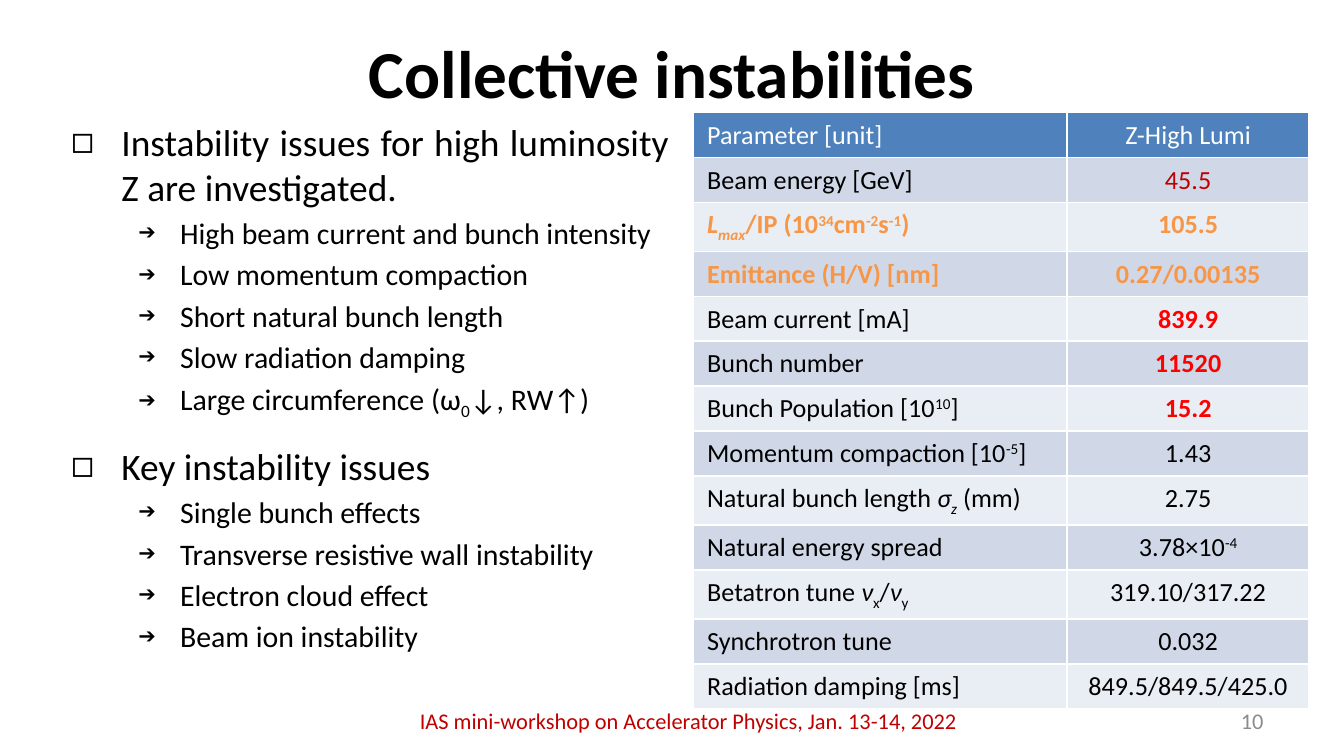
"""Build the slide on collective instabilities with its parameter table."""
from dataclasses import dataclass
from lxml.etree import SubElement
from pptx import Presentation
from pptx.dml.color import RGBColor
from pptx.enum.text import MSO_ANCHOR, MSO_AUTO_SIZE, PP_ALIGN
from pptx.oxml.ns import qn
from pptx.util import Cm, Pt


@dataclass(frozen=True)
class Theme:
    font: str = "Calibri"
    title: int = 36
    issue: int = 20
    detail: int = 16
    cell: int = 14
    footer: int = 12
    black: str = "000000"
    white: str = "FFFFFF"
    dark_red: str = "C00000"
    red: str = "FF0000"
    orange: str = "F79646"
    grey: str = "8C8C8C"
    header: str = "4F81BD"
    bands: tuple = ("D0D8E8", "E9EDF4")


T = Theme()
TITLE = "Collective instabilities"
ISSUES = [
    ("Instability issues for high luminosity Z are investigated.", [
        "High beam current and bunch intensity",
        "Low momentum compaction",
        "Short natural bunch length",
        "Slow radiation damping",
        [("Large circumference (ω", ""), ("0", "_"), ("↓, RW↑)", "")],
    ]),
    ("Key instability issues", [
        "Single bunch effects",
        "Transverse resistive wall instability",
        "Electron cloud effect",
        "Beam ion instability",
    ]),
]
HEADINGS = ("Parameter [unit]", "Z-High Lumi")
LUMINOSITY = [("L", "i"), ("max", "i_"), ("/IP (10", ""), ("34", "^"), ("cm", ""),
              ("-2", "^"), ("s", ""), ("-1", "^"), (")", "")]
BUNCH_LENGTH = [("Natural bunch length ", ""), ("σ", "i"), ("z", "i_"), (" (mm)", "")]
TUNE = [("Betatron tune ", ""), ("ν", "i"), ("x", "_"), ("/", ""), ("ν", "i"), ("y", "_")]
PLAIN = (T.black, False)
KEY = (T.orange, True)
ALERT = (T.red, True)
PARAMETERS = [
    ("Beam energy [GeV]", PLAIN, "45.5", (T.dark_red, False)),
    (LUMINOSITY, KEY, "105.5", KEY),
    ("Emittance (H/V) [nm]", KEY, "0.27/0.00135", KEY),
    ("Beam current [mA]", PLAIN, "839.9", ALERT),
    ("Bunch number", PLAIN, "11520", ALERT),
    ([("Bunch Population [10", ""), ("10", "^"), ("]", "")], PLAIN, "15.2", ALERT),
    ([("Momentum compaction [10", ""), ("-5", "^"), ("]", "")], PLAIN, "1.43", PLAIN),
    (BUNCH_LENGTH, PLAIN, "2.75", PLAIN),
    ("Natural energy spread", PLAIN, [("3.78×10", ""), ("-4", "^")], PLAIN),
    (TUNE, PLAIN, "319.10/317.22", PLAIN),
    ("Synchrotron tune", PLAIN, "0.032", PLAIN),
    ("Radiation damping [ms]", PLAIN, "849.5/849.5/425.0", PLAIN),
]
FOOTERS = [
    ("IAS mini-workshop on Accelerator Physics, Jan. 13-14, 2022",
     7.11, 11.81, PP_ALIGN.CENTER, T.dark_red),
    ("10", 18.21, 5.92, PP_ALIGN.RIGHT, T.grey),
]
BASELINES = {"^": "30000", "_": "-25000"}


def write(p, text, size, color=T.black, bold=False, align=PP_ALIGN.LEFT):
    p.alignment = align
    for part, marks in [(text, "")] if isinstance(text, str) else text:
        r = p.add_run()
        r.text = part
        f = r.font
        f.name, f.size, f.bold = T.font, Pt(size), bold
        f.italic = "i" in marks
        f.color.rgb = RGBColor.from_string(color)
        for mark, shift in BASELINES.items():
            if mark in marks:
                f._element.set("baseline", shift)


def place(sp, left, top, width, height):
    sp.left, sp.top, sp.width, sp.height = Cm(left), Cm(top), Cm(width), Cm(height)


def add_bullet(tf, text, level, before):
    p = tf.paragraphs[0] if not tf.paragraphs[0].runs else tf.add_paragraph()
    p.level = level
    p.space_before = Pt(before)
    write(p, text, (T.issue, T.detail)[level], align=PP_ALIGN.JUSTIFY)
    margin, hang = ((0.95, 0.95), (2.06, 0.79))[level]
    pPr = p._p.get_or_add_pPr()
    pPr.set("marL", str(Cm(margin)))
    pPr.set("indent", str(-Cm(hang)))
    SubElement(pPr, qn("a:buSzPct"), val=("100000", "70000")[level])
    SubElement(pPr, qn("a:buChar"), char="◻➔"[level])


def add_parameters(s):
    rows = [(HEADINGS[0], (T.white, False), HEADINGS[1], (T.white, False))] + PARAMETERS
    row_height = 0.71
    table = s.shapes.add_table(len(rows), 2, Cm(13.11), Cm(2.13), Cm(11.63),
                               Cm(row_height * len(rows))).table
    for column, width in zip(table.columns, (7.06, 4.57)):
        column.width = Cm(width)
    for i, (name, name_style, value, value_style) in enumerate(rows):
        fill = T.bands[(i - 1) % 2] if i else T.header
        cells = ((name, name_style, PP_ALIGN.LEFT), (value, value_style, PP_ALIGN.CENTER))
        for j, (text, style, align) in enumerate(cells):
            cell = table.cell(i, j)
            cell.fill.solid()
            cell.fill.fore_color.rgb = RGBColor.from_string(fill)
            write(cell.text_frame.paragraphs[0], text, T.cell, *style, align)


def main():
    prs = Presentation()
    prs.slide_width, prs.slide_height = Cm(25.4), Cm(14.29)
    s = prs.slides.add_slide(prs.slide_layouts[1])

    title, body = s.placeholders
    place(title, 1.27, 0.36, 22.86, 2)
    title.text_frame.vertical_anchor = MSO_ANCHOR.MIDDLE
    write(title.text_frame.paragraphs[0], TITLE, T.title, bold=True, align=PP_ALIGN.CENTER)

    for text, left, width, align, color in FOOTERS:
        sp = s.shapes.add_textbox(Cm(left), Cm(13.24), Cm(width), Cm(0.76))
        tf = sp.text_frame
        tf.word_wrap = True
        tf.vertical_anchor = MSO_ANCHOR.MIDDLE
        write(tf.paragraphs[0], text, T.footer, color, align=align)

    place(body, 1.09, 2.13, 11.81, 11.4)
    tf = body.text_frame
    tf.auto_size = MSO_AUTO_SIZE.NONE
    for i, (issue, details) in enumerate(ISSUES):
        add_bullet(tf, issue, 0, 12 if i else 3)
        for detail in details:
            add_bullet(tf, detail, 1, 3)

    add_parameters(s)
    prs.save("out.pptx")


if __name__ == "__main__":
    main()
